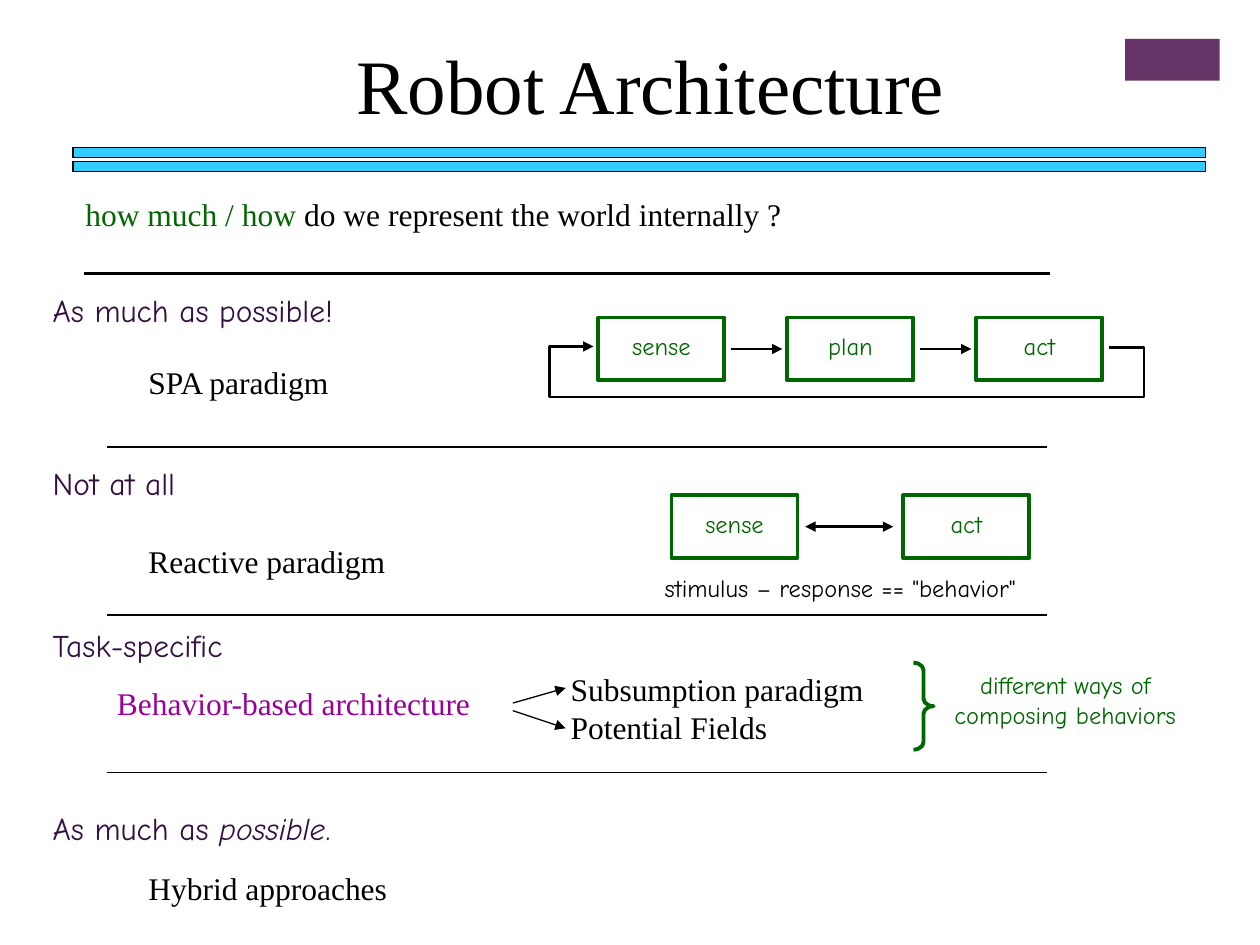
from lxml import etree
from pptx import Presentation
from pptx.dml.color import RGBColor
from pptx.enum.shapes import MSO_CONNECTOR, MSO_SHAPE
from pptx.enum.text import MSO_ANCHOR, MSO_AUTO_SIZE, PP_ALIGN
from pptx.oxml.ns import qn
from pptx.util import Inches, Pt

LEFT, CENTER = PP_ALIGN.LEFT, PP_ALIGN.CENTER
TOP, MIDDLE = MSO_ANCHOR.TOP, MSO_ANCHOR.MIDDLE
GROW = MSO_AUTO_SIZE.SHAPE_TO_FIT_TEXT
STRAIGHT = MSO_CONNECTOR.STRAIGHT
RECTANGLE, BRACE = MSO_SHAPE.RECTANGLE, MSO_SHAPE.RIGHT_BRACE

SERIF, HAND = "Times New Roman", "Comic Neue"
BLACK, GREEN, PURPLE, MAGENTA = "000000", "006600", "330F42", "990099"
BAR_BLUE, CORNER = "33CCFF", "663366"
NODE_WIDTH, NODE_HEIGHT = 1, 0.5


def color(value):
    return RGBColor.from_string(value)


def write(frame, text, size=18, font=SERIF, fill=BLACK, align=LEFT,
          line_spacing=None, half_line_before=True, anchor=TOP):
    """Fill a frame; text is a string or a list of (text, font overrides)."""
    frame.word_wrap = True
    frame.vertical_anchor = anchor
    para = frame.paragraphs[0]
    para.alignment = align
    if line_spacing:
        para.line_spacing = line_spacing
    if half_line_before:
        before = etree.SubElement(para._p.get_or_add_pPr(), qn("a:spcBef"))
        etree.SubElement(before, qn("a:spcPct"), val="50000")
    for words, overrides in [(text, {})] if isinstance(text, str) else text:
        span = para.add_run()
        span.text = words
        span.font.name = font
        span.font.size = Pt(size)
        span.font.italic = overrides.get("italic", False)
        span.font.color.rgb = color(overrides.get("fill", fill))


def add_text(page, box, text, **style):
    text_box = page.shapes.add_textbox(*map(Inches, box))
    write(text_box.text_frame, text, **style)
    text_box.text_frame.auto_size = GROW


def add_shape(page, kind, box, fill=None, line=None, width=0.75):
    shape = page.shapes.add_shape(kind, *map(Inches, box))
    shape.shadow.inherit = False
    if fill:
        shape.fill.solid()
        shape.fill.fore_color.rgb = color(fill)
    else:
        shape.fill.background()
    if line:
        shape.line.color.rgb = color(line)
        shape.line.width = Pt(width)
    else:
        shape.line.fill.background()
    return shape


def add_arrowheads(shape, ends):
    """Put triangles on the given ends: headEnd is the start, tailEnd the finish."""
    outline = shape.line._get_or_add_ln()
    for end in ends:
        etree.SubElement(outline, qn(f"a:{end}"), type="triangle")


def add_line(page, start, finish, width=1.5, ends=()):
    line = page.shapes.add_connector(STRAIGHT, *map(Inches, start + finish))
    line.line.color.rgb = color(BLACK)
    line.line.width = Pt(width)
    add_arrowheads(line, ends)
    etree.SubElement(line._element.spPr, qn("a:effectLst"))


def add_node(page, left, top, label):
    node = add_shape(page, RECTANGLE, (left, top, NODE_WIDTH, NODE_HEIGHT),
                     line=GREEN, width=2.25)
    write(node.text_frame, label, size=14, font=HAND, fill=GREEN,
          align=CENTER, anchor=MIDDLE)
    node.text_frame.margin_bottom = Inches(0.1)


def add_header(page, box):
    left, top, width, height = box
    title = page.shapes.title
    title.left, title.top = Inches(left + 1), Inches(top)
    title.width, title.height = Inches(7.17), Inches(0.83)
    write(title.text_frame, "Robot Architecture", size=44, align=CENTER)
    title.text_frame.auto_size = GROW
    bar_height = 0.08
    for bar_top in (top + height - 0.19, top + height - bar_height):
        add_shape(page, RECTANGLE, (left, bar_top, width, bar_height),
                  fill=BAR_BLUE, line=BLACK)
    add_shape(page, RECTANGLE, (left + 8.35, top + 0.06, 0.75, 0.33), fill=CORNER)


def add_question(page, box):
    left, top, width, height = box
    add_text(page, (left, top, width, 0.5),
             [("how much / how", {"fill": GREEN}),
              (" do we represent the world internally ?", {})])
    add_line(page, (left + 0.09, top + height), (left + 7.75, top + height))


def add_answer(page, top, answer, paradigm, paradigm_box, fill=BLACK):
    add_text(page, (0.32, top, 3.67, 0.62), answer, font=HAND, fill=PURPLE,
             line_spacing=1.3)
    add_text(page, paradigm_box + (0.4,), paradigm, fill=fill)


def add_plan_loop(page, box):
    """Three nodes in a row, with a loop from the last back to the first."""
    left, top, width, height = box
    pitch = 1.5
    middle = top + NODE_HEIGHT / 2
    first = left + 0.39
    for index, label in enumerate(("sense", "plan", "act")):
        node_left = first + index * pitch
        add_node(page, node_left, top, label)
        if index:
            add_line(page, (node_left - 0.45, middle), (node_left - 0.04, middle),
                     ends=["tailEnd"])
    right, bottom = left + width, top + height
    leave, enter = middle - 0.01, middle - 0.02
    corners = [(left + 4.44, leave), (right, leave), (right, bottom),
               (left, bottom), (left, enter), (left + 0.35, enter)]
    start, *others = [(Inches(x), Inches(y)) for x, y in corners]
    builder = page.shapes.build_freeform(*start)
    builder.add_line_segments(others, close=False)
    loop = builder.convert_to_shape()
    loop.shadow.inherit = False
    loop.fill.background()
    loop.line.color.rgb = color(BLACK)
    loop.line.width = Pt(1.5)
    add_arrowheads(loop, ["tailEnd"])


def add_reactive_pair(page, box):
    left, top, width, height = box
    middle = top + NODE_HEIGHT / 2
    add_node(page, left, top, "sense")
    add_node(page, left + width - NODE_WIDTH, top, "act")
    add_line(page, (left + 1.06, middle), (left + width - 1.08, middle),
             ends=["headEnd", "tailEnd"])
    add_text(page, (left - 0.41, top + height, 3.5, 0.33),
             'stimulus – response == "behavior"', size=14, font=HAND, align=CENTER)


def add_behavior_branches(page, box):
    left, top, width, height = box
    branches = (("Subsumption paradigm", 0, 0.31, 0.19),
                ("Potential Fields", 0.3, 0.37, 0.51))
    for label, offset, start, finish in branches:
        add_text(page, (left + 0.36, top + offset, 3, 0.4), label)
        add_line(page, (left, top + start), (left + 0.42, top + finish),
                 width=0.75, ends=["tailEnd"])
    brace = add_shape(page, BRACE, (left + 3.18, top - 0.01, 0.16, height),
                      line=GREEN, width=2.25)
    brace.adjustments[0] = 0.37
    add_text(page, (left + width - 2.25, top, 2.25, 0.57),
             "different ways of composing behaviors", size=14, font=HAND,
             fill=GREEN, align=CENTER, half_line_before=False)


def main():
    deck = Presentation()
    deck.slide_width, deck.slide_height = Inches(10), Inches(7.5)
    page = deck.slides.add_slide(deck.slide_layouts[5])
    add_header(page, (0.58, 0.25, 8.99, 1.11))
    add_question(page, (0.58, 1.5, 7.83, 0.67))
    add_answer(page, 2.17, "As much as possible!", "SPA paradigm", (1.08, 2.83, 3.75))
    add_answer(page, 3.54, "Not at all", "Reactive paradigm", (1.08, 4.25, 3.75))
    add_answer(page, 4.83, "Task-specific", "Behavior-based architecture",
               (0.83, 5.38, 3.5), fill=MAGENTA)
    add_answer(page, 6.28,
               [("As much as ", {}), ("possible", {"italic": True}), (".", {})],
               "Hybrid approaches", (1.08, 6.85, 3.75))
    for divider in (3.55, 4.88, 6.13):
        add_line(page, (0.85, divider), (8.31, divider), width=1)
    add_plan_loop(page, (4.36, 2.52, 4.72, 0.63))
    add_reactive_pair(page, (5.33, 3.93, 2.84, 0.57))
    add_behavior_branches(page, (4.07, 5.27, 5.51, 0.69))
    deck.save("out.pptx")


if __name__ == "__main__":
    main()
